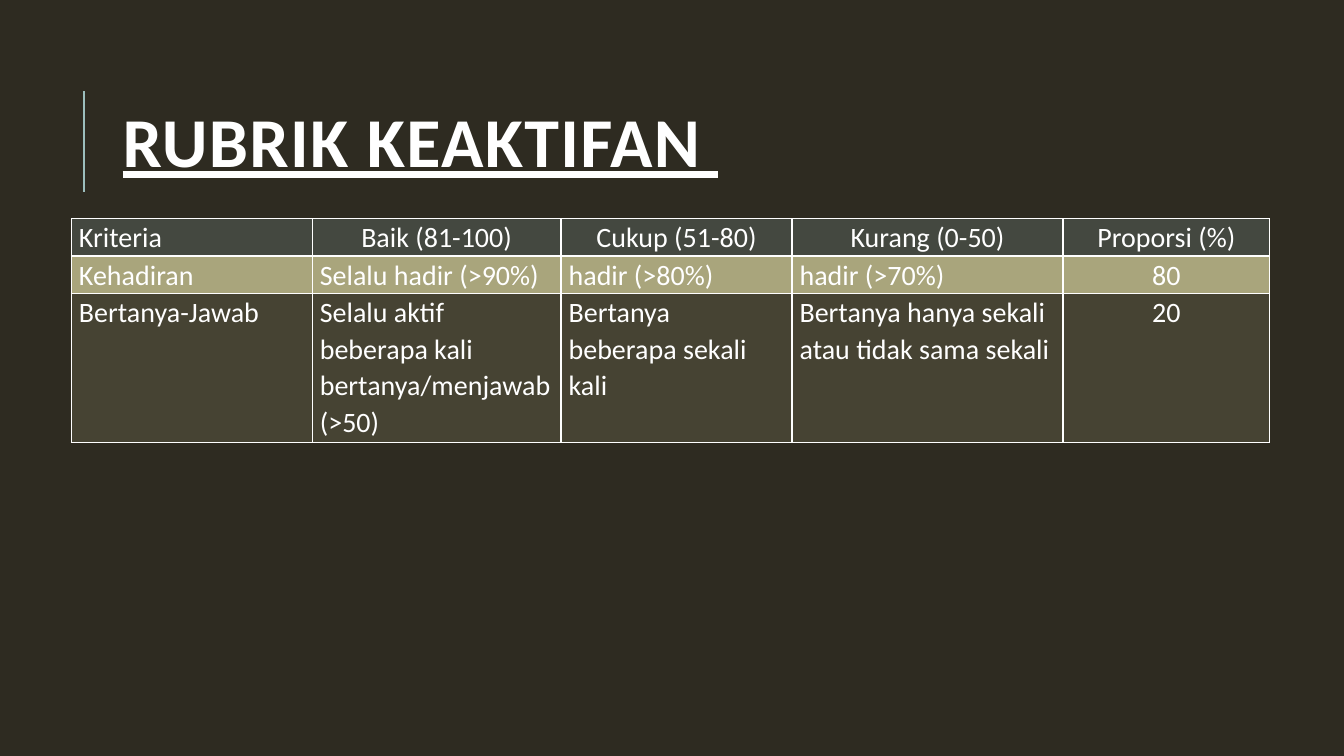
from lxml import etree
from pptx import Presentation
from pptx.dml.color import RGBColor
from pptx.enum import shapes, text
from pptx.oxml import ns
from pptx.util import Cm, Pt

FONT = "Calibri"
WHITE, SAGE, OLIVE, BACKDROP = "FFFFFF", "9CBEBD", "A9A57C", "2E2B21"
COLUMN_WIDTHS = [6.07, 6.27, 5.82, 6.83, 5.21]
ROW_HEIGHTS = [0.94, 0.94, 3.76]
ROW_FILLS = [(SAGE, 20), (OLIVE, 100), (OLIVE, 20)]
RUBRIC = [
    ["Kriteria", "Baik (81-100)", "Cukup (51-80)", "Kurang (0-50)", "Proporsi (%)"],
    ["Kehadiran", "Selalu hadir (>90%)", "hadir (>80%)", "hadir (>70%)", "80"],
    ["Bertanya-Jawab", "Selalu aktif beberapa kali bertanya/menjawab (>50)",
     "Bertanya beberapa sekali kali",
     "Bertanya hanya sekali atau tidak sama sekali", "20"],
]


def color(hex_code):
    return RGBColor.from_string(hex_code)


def add_child(parent, tag, **attributes):
    return etree.SubElement(parent, ns.qn(tag), attributes)


def set_font(paragraph, size):
    font = paragraph.font
    font.name, font.size = FONT, Pt(size)
    font.color.rgb = color(WHITE)
    return font


def fill_cell(cell, hex_code, opacity):
    cell.fill.solid()
    cell.fill.fore_color.rgb = color(hex_code)
    if opacity < 100:
        tint = cell._tc.tcPr.find(".//" + ns.qn("a:srgbClr"))
        add_child(tint, "a:alpha", val=str(opacity * 1000))


def border_cell(cell):
    """Draw thin white edges; they must precede the fill in the XML."""
    properties = cell._tc.get_or_add_tcPr()
    for position, edge in enumerate(["a:lnL", "a:lnR", "a:lnT", "a:lnB"]):
        line = add_child(properties, edge, w=str(Pt(1)))
        add_child(add_child(line, "a:solidFill"), "a:srgbClr", val=WHITE)
        properties.insert(position, line)


def alignment(row, column):
    if column == 0:
        return text.PP_ALIGN.JUSTIFY if row else text.PP_ALIGN.LEFT
    if row == 0 or column == len(COLUMN_WIDTHS) - 1:
        return text.PP_ALIGN.CENTER
    return text.PP_ALIGN.LEFT


def add_title(slide, left, top, width, height):
    """Place the heading with its accent rule on the left."""
    rule_x, rule_margin = left - Cm(0.73), Cm(0.66)
    rule = slide.shapes.add_connector(
        shapes.MSO_CONNECTOR.STRAIGHT, rule_x, top + height - Cm(0.97),
        rule_x, top + rule_margin)
    rule.line.color.rgb = color(SAGE)
    rule.line.width = Pt(1.5)
    add_child(rule._element.spPr, "a:effectLst")

    heading = slide.shapes.add_textbox(left, top, width, height).text_frame
    heading.word_wrap = True
    heading.vertical_anchor = text.MSO_ANCHOR.MIDDLE
    paragraph = heading.paragraphs[0]
    paragraph.line_spacing = 0.8
    run = paragraph.add_run()
    run.text = "RUBRIK KEAKTIFAN "
    font = set_font(run, 50)
    font.bold = font.underline = True
    run._r.get_or_add_rPr().set("spc", "100")


def add_rubric(slide, left, top):
    table = slide.shapes.add_table(
        len(RUBRIC), len(COLUMN_WIDTHS), left, top,
        Cm(sum(COLUMN_WIDTHS)), Cm(sum(ROW_HEIGHTS))).table
    for column, width in zip(table.columns, COLUMN_WIDTHS):
        column.width = Cm(width)
    for row, height in zip(table.rows, ROW_HEIGHTS):
        row.height = Cm(height)
    for r, entries in enumerate(RUBRIC):
        for c, entry in enumerate(entries):
            cell = table.cell(r, c)
            cell.margin_left = cell.margin_right = Cm(0.19)
            cell.margin_top = cell.margin_bottom = 0
            fill_cell(cell, *ROW_FILLS[r])
            border_cell(cell)
            cell.text = entry
            paragraph = cell.text_frame.paragraphs[0]
            paragraph.alignment = alignment(r, c)
            paragraph.line_spacing = 1.07
            paragraph.space_after = Pt(8)
            set_font(paragraph, 20).bold = False


def main():
    deck = Presentation()
    deck.slide_width, deck.slide_height = Cm(33.87), Cm(19.05)
    slide = deck.slides.add_slide(deck.slide_layouts[6])
    slide.background.fill.solid()
    slide.background.fill.fore_color.rgb = color(BACKDROP)
    add_title(slide, Cm(2.84), Cm(1.63), Cm(27), Cm(4.17))
    add_rubric(slide, Cm(1.8), Cm(5.51))
    deck.save("out.pptx")


if __name__ == "__main__":
    main()
